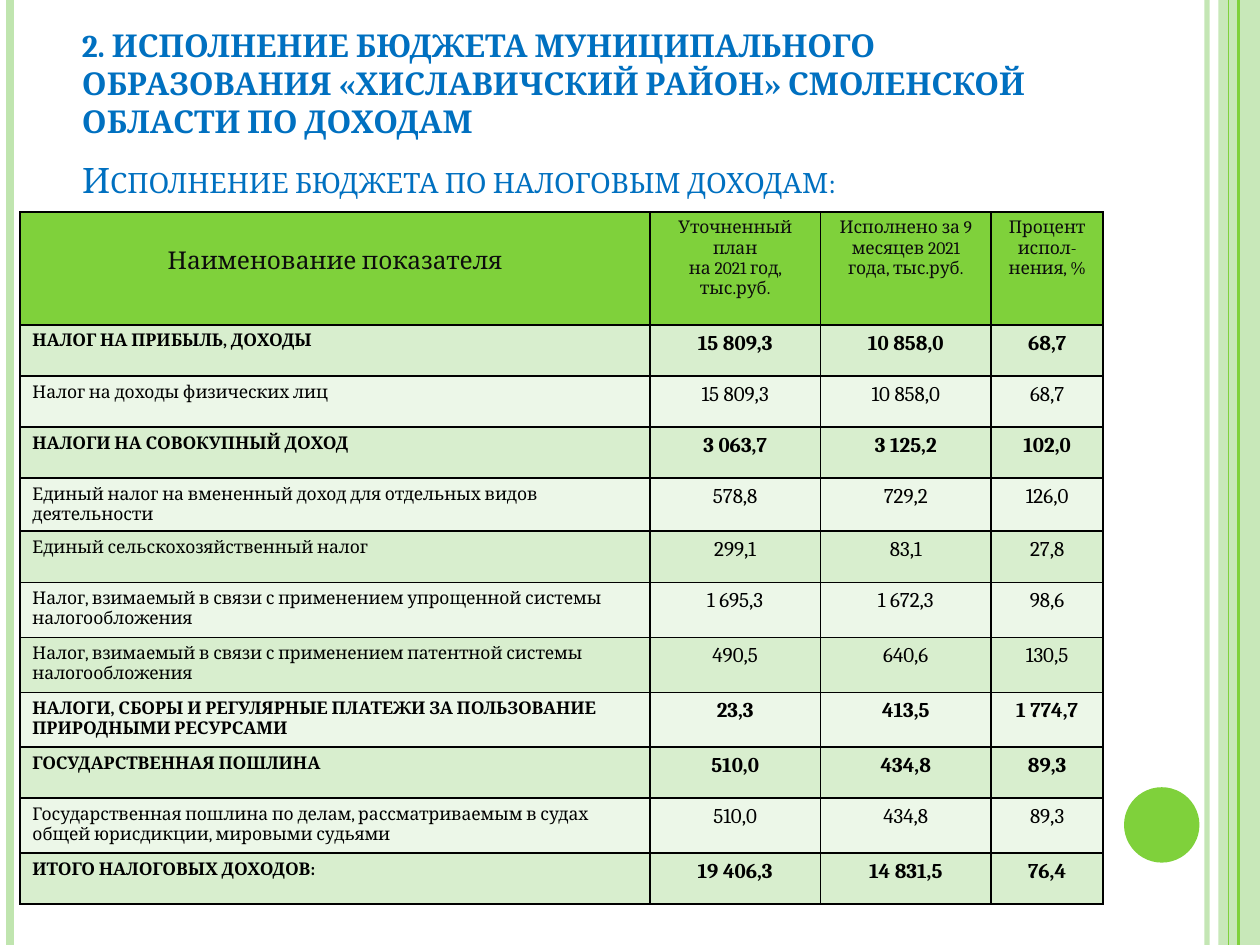
"""Build the slide on tax revenue execution of a district budget."""
from lxml import etree
from pptx import Presentation
from pptx import util as u
from pptx.dml.color import RGBColor
from pptx.enum import shapes, text
from pptx.oxml.ns import qn

GREEN = RGBColor(0x7F, 0xD1, 0x3B)
PALE = RGBColor(0xC0, 0xE5, 0xAF)
BAND_DARK = RGBColor(0xD8, 0xEE, 0xCE)
BAND_LIGHT = RGBColor(0xEC, 0xF7, 0xE8)
BLUE = RGBColor(0x00, 0x70, 0xC0)
BLACK = RGBColor(0x00, 0x00, 0x00)
CHARCOAL = RGBColor(0x0D, 0x0D, 0x0D)


def add_alpha(colored, percent):
    color = next(colored.iter(qn("a:srgbClr")))
    etree.SubElement(color, qn("a:alpha")).set("val", str(percent * 1000))


def write(frame, lines, align, color, **font_format):
    frame.text = "\n".join(lines)
    frame.word_wrap = True
    for paragraph in frame.paragraphs:
        paragraph.alignment = align
        for run in paragraph.runs:
            run.font.color.rgb = color
            for key, value in {"name": "Cambria", **font_format}.items():
                setattr(run.font, key, value)


deck = Presentation()
deck.slide_width, deck.slide_height = u.Cm(25.4), u.Cm(19.05)
slide = deck.slides.add_slide(deck.slide_layouts[5])

side_band = slide.shapes.add_shape(
    shapes.MSO_SHAPE.RECTANGLE, u.Cm(24.56), 0, u.Cm(0.84), deck.slide_height)
page_circle = slide.shapes.add_shape(
    shapes.MSO_SHAPE.OVAL, u.Cm(22.66), u.Cm(15.87), u.Cm(1.52), u.Cm(1.52))
for ornament, color in ((side_band, PALE), (page_circle, GREEN)):
    ornament.shadow.inherit = False
    ornament.fill.solid()
    ornament.fill.fore_color.rgb = color
    ornament.line.fill.background()
add_alpha(side_band.fill._xPr, 87)

for x, color, width, opacity in (
    (24.33, PALE, 3, 93),
    (0.2, PALE, 4.5, 100),
    (24.97, GREEN, 1.5, 100),
    (24.77, GREEN, 0.75, 100),
):
    stripe = slide.shapes.add_connector(
        shapes.MSO_CONNECTOR.STRAIGHT, u.Cm(x), 0, u.Cm(x), deck.slide_height)
    stripe.line.color.rgb = color
    stripe.line.width = u.Pt(width)
    etree.SubElement(stripe._element.spPr, qn("a:effectLst"))
    if opacity < 100:
        add_alpha(stripe._element.spPr, opacity)

subtitle = slide.shapes.title
for key, value in {"left": 1.4, "top": 0.99, "width": 20.75, "height": 3.18}.items():
    setattr(subtitle, key, u.Cm(value))
write(subtitle.text_frame, ["Исполнение бюджета по налоговым доходам:"],
      text.PP_ALIGN.LEFT, BLUE, size=u.Pt(20))
subtitle.text_frame.vertical_anchor = text.MSO_ANCHOR.BOTTOM
subtitle.text_frame.paragraphs[0].runs[0].font._element.set("cap", "small")

headers = (
    ["Наименование показателя"],
    ["Уточненный план", "на 2021 год, тыс.руб."],
    ["Исполнено за 9 месяцев 2021 года, тыс.руб."],
    ["Процент испол-нения, %"],
)
revenues = (
    ("НАЛОГ НА ПРИБЫЛЬ, ДОХОДЫ", "15 809,3", "10 858,0", "68,7"),
    ("Налог на доходы физических лиц", "15 809,3", "10 858,0", "68,7"),
    ("НАЛОГИ НА СОВОКУПНЫЙ ДОХОД", "3 063,7", "3 125,2", "102,0"),
    ("Единый налог на вмененный доход для отдельных видов деятельности",
     "578,8", "729,2", "126,0"),
    ("Единый сельскохозяйственный налог", "299,1", "83,1", "27,8"),
    ("Налог, взимаемый в связи с применением упрощенной системы налогообложения",
     "1 695,3", "1 672,3", "98,6"),
    ("Налог, взимаемый в связи с применением патентной системы налогообложения",
     "490,5", "640,6", "130,5"),
    ("НАЛОГИ, СБОРЫ И РЕГУЛЯРНЫЕ ПЛАТЕЖИ ЗА ПОЛЬЗОВАНИЕ ПРИРОДНЫМИ РЕСУРСАМИ",
     "23,3", "413,5", "1 774,7"),
    ("ГОСУДАРСТВЕННАЯ ПОШЛИНА", "510,0", "434,8", "89,3"),
    ("Государственная пошлина по делам, рассматриваемым в судах общей юрисдикции, "
     "мировыми судьями", "510,0", "434,8", "89,3"),
    ("ИТОГО НАЛОГОВЫХ ДОХОДОВ:", "19 406,3", "14 831,5", "76,4"),
)
column_widths = (12.7, 3.44, 3.44, 2.26)
row_heights = (2.28, 1.03, 1.03, 1.03, 1.06, 1.03, 1.11, 1.11, 1.1, 1.03, 1.11, 1.03)
budget = slide.shapes.add_table(
    len(row_heights), len(column_widths), u.Cm(0.4), u.Cm(4.27),
    u.Cm(sum(column_widths)), u.Cm(sum(row_heights))).table
for column, width in zip(budget.columns, column_widths):
    column.width = u.Cm(width)
for row, height in zip(budget.rows, row_heights):
    row.height = u.Cm(height)

for column, lines in enumerate(headers):
    write(budget.cell(0, column).text_frame, lines, text.PP_ALIGN.CENTER, CHARCOAL,
          size=u.Pt(10 if column else 14), bold=False)
budget.cell(0, 0).margin_top = u.Cm(0.72)

for row, revenue in enumerate(revenues, start=1):
    for column, entry in enumerate(revenue):
        write(budget.cell(row, column).text_frame, [entry],
              text.PP_ALIGN.CENTER if column else text.PP_ALIGN.LEFT, BLACK,
              size=u.Pt(12 if column else 10), bold=revenue[0].isupper())

for row in range(len(row_heights)):
    for column in range(len(column_widths)):
        cell = budget.cell(row, column)
        properties = cell._tc.get_or_add_tcPr()
        for side in ("a:lnL", "a:lnR", "a:lnT", "a:lnB"):
            border = etree.SubElement(properties, qn(side), w=str(u.Pt(1)))
            paint = etree.SubElement(border, qn("a:solidFill"))
            etree.SubElement(paint, qn("a:srgbClr"), val=str(BLACK))
        cell.fill.solid()
        cell.fill.fore_color.rgb = (
            GREEN if row == 0 else BAND_DARK if row % 2 else BAND_LIGHT)

heading = slide.shapes.add_textbox(u.Cm(1.4), u.Cm(0.41), u.Cm(21.23), u.Cm(2.57))
write(heading.text_frame,
      ["2. ИСПОЛНЕНИЕ БЮДЖЕТА МУНИЦИПАЛЬНОГО ОБРАЗОВАНИЯ «ХИСЛАВИЧСКИЙ РАЙОН» "
       "СМОЛЕНСКОЙ ОБЛАСТИ ПО ДОХОДАМ"],
      text.PP_ALIGN.LEFT, BLUE, size=u.Pt(18), bold=True)

deck.save("out.pptx")
